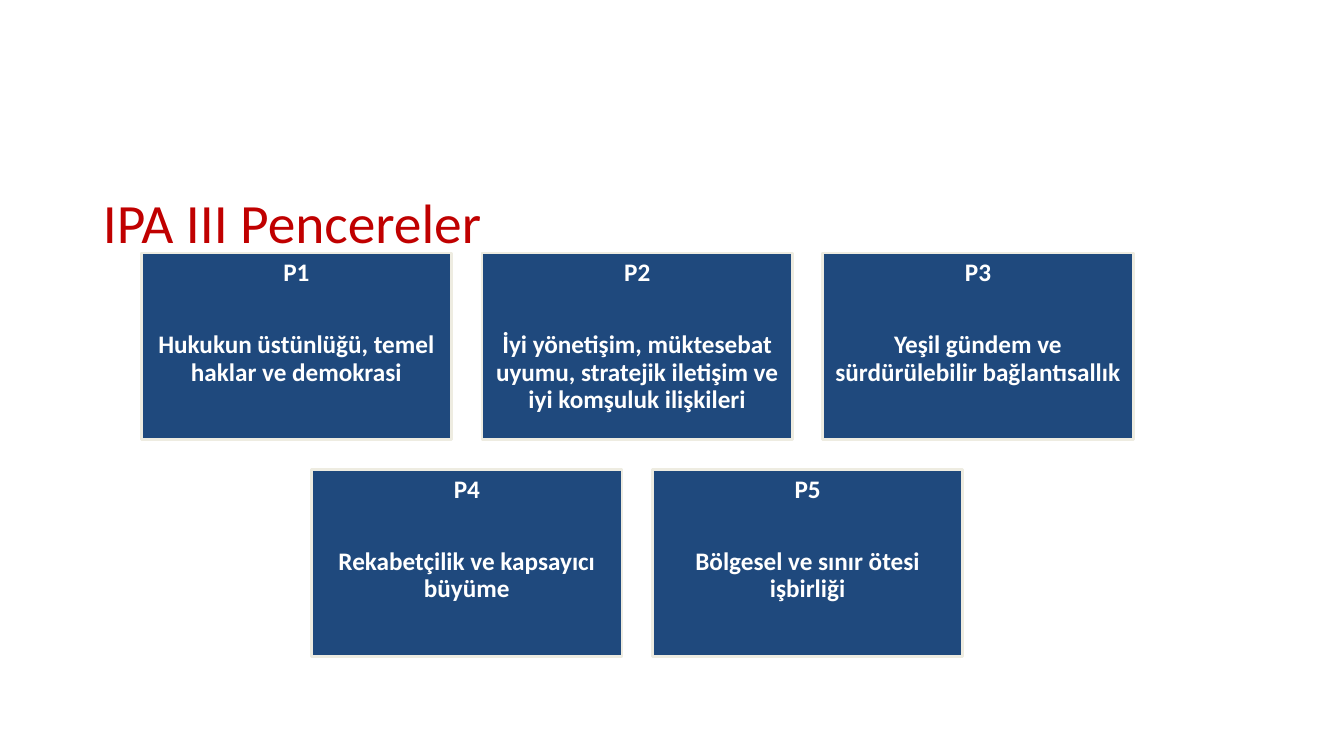
from pptx import Presentation
from pptx.dml.color import RGBColor
from pptx.enum.shapes import MSO_SHAPE
from pptx.enum.text import MSO_ANCHOR, MSO_AUTO_SIZE, PP_ALIGN
from pptx.util import Inches, Pt

RECTANGLE = MSO_SHAPE.RECTANGLE
TOP, MIDDLE = MSO_ANCHOR.TOP, MSO_ANCHOR.MIDDLE
NO_AUTOFIT = MSO_AUTO_SIZE.NONE
LEFT, CENTER = PP_ALIGN.LEFT, PP_ALIGN.CENTER
TITLE_ONLY = 5

COLORS = {"title": "C00000", "card": "1F497D", "border": "EEECE1", "text": "FFFFFF"}
TITLE_FONT = {"name": "Calibri", "size": Pt(39.6), "bold": False}
CARD_FONT = {"name": "Calibri", "size": Pt(18), "bold": True}

# Boxes are left, top, width, height in inches
TITLE_BOX = (0.92, 2.09, 11.5, 0.29)
GRID_BOX = (1.4, 2.51, 9.84, 4.0)
GAP = 0.3

WINDOW_ROWS = [
    [
        ("P1", "Hukukun üstünlüğü, temel haklar ve demokrasi"),
        ("P2", "İyi yönetişim, müktesebat uyumu, stratejik iletişim ve iyi komşuluk ilişkileri"),
        ("P3", "Yeşil gündem ve sürdürülebilir bağlantısallık"),
    ],
    [
        ("P4", "Rekabetçilik ve kapsayıcı büyüme"),
        ("P5", "Bölgesel ve sınır ötesi işbirliği"),
    ],
]


def color(key):
    return RGBColor.from_string(COLORS[key])


def write_paragraph(para, text, font, color_key, alignment):
    para.text = text
    para.alignment = alignment
    para.line_spacing = 0.9
    for name, value in font.items():
        setattr(para.font, name, value)
    para.font.color.rgb = color(color_key)


def add_title(page, box, text):
    title = page.shapes.title
    title.left, title.top, title.width, title.height = map(Inches, box)
    frame = title.text_frame
    frame.auto_size = NO_AUTOFIT
    frame.vertical_anchor = MIDDLE
    write_paragraph(frame.paragraphs[0], text, TITLE_FONT, "title", LEFT)


def add_card(page, box, code, theme):
    card = page.shapes.add_shape(RECTANGLE, *map(Inches, box))
    card.shadow.inherit = False
    card.fill.solid()
    card.fill.fore_color.rgb = color("card")
    card.line.color.rgb = color("border")
    card.line.width = Pt(2)

    frame = card.text_frame
    frame.word_wrap = True
    frame.vertical_anchor = TOP
    for side in ("left", "top", "right", "bottom"):
        setattr(frame, f"margin_{side}", Inches(0.07))
    write_paragraph(frame.paragraphs[0], code, CARD_FONT, "text", CENTER)
    theme_para = frame.add_paragraph()
    write_paragraph(theme_para, theme, CARD_FONT, "text", CENTER)
    theme_para.space_before = Pt(32)


def add_card_grid(page, box, rows):
    left, top, width, height = box
    columns = max(map(len, rows))
    card_width = (width - GAP * (columns - 1)) / columns
    card_height = (height - GAP * (len(rows) - 1)) / len(rows)
    for row_index, row in enumerate(rows):
        # Shorter rows are centred in the grid
        indent = (columns - len(row)) * (card_width + GAP) / 2
        card_top = top + row_index * (card_height + GAP)
        for column, (code, theme) in enumerate(row):
            card_left = left + indent + column * (card_width + GAP)
            add_card(page, (card_left, card_top, card_width, card_height), code, theme)


def main():
    deck = Presentation()
    deck.slide_width, deck.slide_height = Inches(13.33), Inches(7.5)
    page = deck.slides.add_slide(deck.slide_layouts[TITLE_ONLY])
    add_card_grid(page, GRID_BOX, WINDOW_ROWS)
    add_title(page, TITLE_BOX, "IPA III Pencereler")
    deck.save("out.pptx")


if __name__ == "__main__":
    main()
